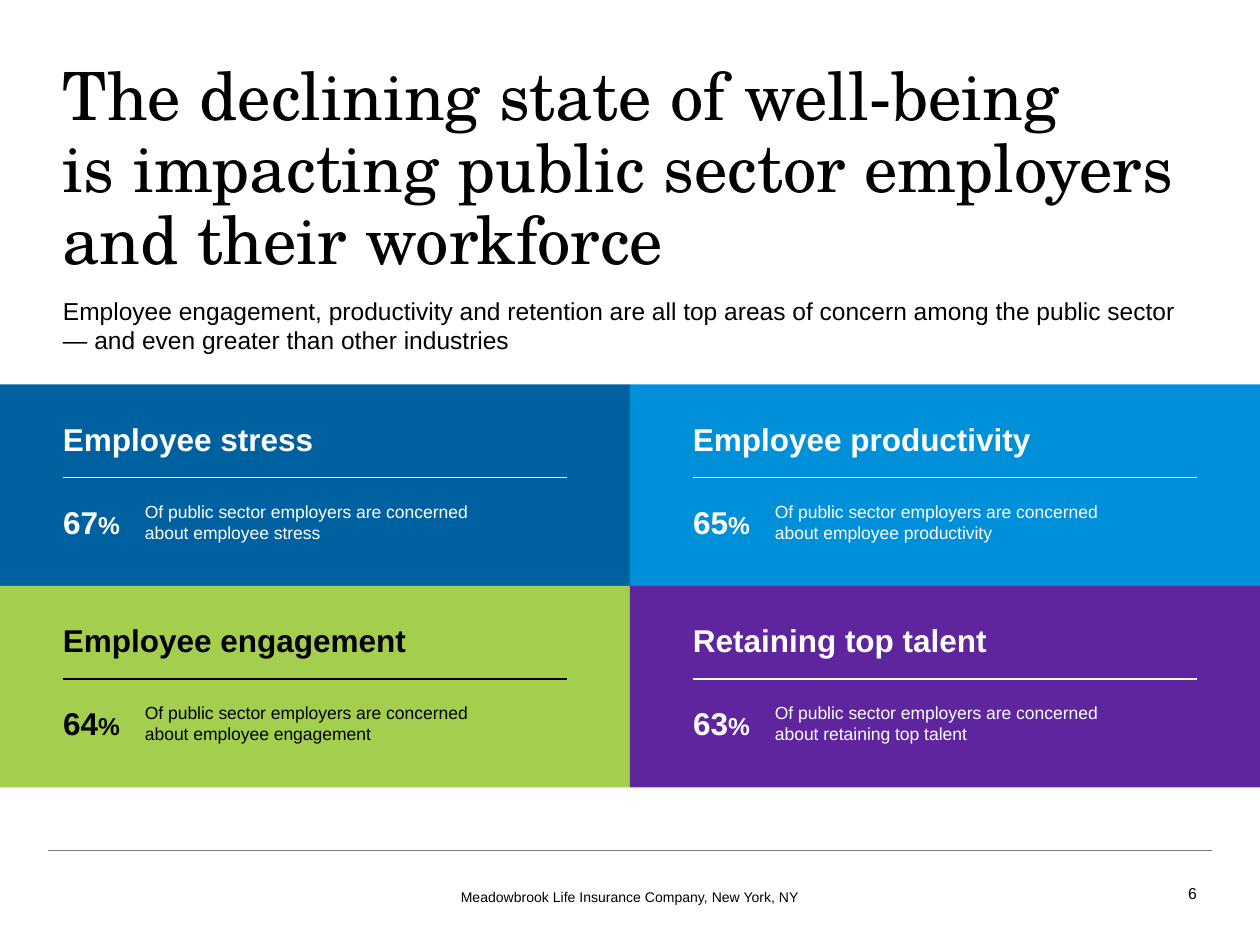
from dataclasses import dataclass

from lxml import etree
from pptx import Presentation
from pptx.dml.color import RGBColor
from pptx.enum import shapes, text
from pptx.oxml import ns
from pptx.util import Inches, Pt


@dataclass(frozen=True)
class Theme:
    serif: str = "TeX Gyre Schola"
    sans: str = "Arial"
    black: str = "000000"
    white: str = "FFFFFF"
    gray: str = "75787B"
    navy: str = "0061A0"
    blue: str = "0090DA"
    green: str = "A4CE4E"
    purple: str = "5F259F"
    title: int = 38
    heading: int = 18
    lead: int = 14
    body: int = 10
    number: int = 9
    footer: int = 8


T = Theme()
LEFT, CENTER, RIGHT = (text.PP_ALIGN.LEFT, text.PP_ALIGN.CENTER,
                       text.PP_ALIGN.RIGHT)
TOP, MIDDLE = text.MSO_ANCHOR.TOP, text.MSO_ANCHOR.MIDDLE


def add_text(s, box, runs, color=T.black, font=T.sans, bold=False,
             align=LEFT, anchor=MIDDLE, spacing=1.0):
    """Place one paragraph of (text, size) runs; newlines break lines."""
    tf = s.shapes.add_textbox(*map(Inches, box)).text_frame
    frame = dict(word_wrap=True, vertical_anchor=anchor, margin_left=0,
                 margin_right=0, margin_top=0, margin_bottom=0)
    for name, value in frame.items():
        setattr(tf, name, value)
    p = tf.paragraphs[0]
    p.alignment, p.line_spacing = align, spacing
    for words, size in runs:
        for i, line in enumerate(words.split("\n")):
            if i:
                p.add_line_break()
            r = p.add_run()
            r.text = line
            for name, value in dict(name=font, size=Pt(size), bold=bold).items():
                setattr(r.font, name, value)
            r.font.color.rgb = RGBColor.from_string(color)


def add_rule(s, x, y, w, color, weight):
    line = s.shapes.add_connector(shapes.MSO_CONNECTOR.STRAIGHT, Inches(x),
                                  Inches(y), Inches(x + w), Inches(y))
    line.line.color.rgb = RGBColor.from_string(color)
    line.line.width = Pt(weight)
    etree.SubElement(line._element.spPr, ns.qn("a:effectLst"))


def add_header(s, x, y, w):
    add_text(s, (x, y, w, 1.7),
             [("The declining state of well-being\nis impacting public sector "
               "employers and their workforce", T.title)],
             font=T.serif, anchor=TOP, spacing=0.9)
    add_text(s, (x, y + 1.85, w, 0.43),
             [("Employee engagement, productivity and retention are all top "
               "areas of concern among the public sector\n"
               "— and even greater than other industries", T.lead)],
             anchor=TOP)


def add_panel(s, x, y, w, h, fill, ink, heading, percent, topic):
    sp = s.shapes.add_shape(shapes.MSO_SHAPE.RECTANGLE,
                            *map(Inches, (x, y, w, h)))
    sp.shadow.inherit = False
    sp.fill.solid()
    sp.fill.fore_color.rgb = RGBColor.from_string(fill)
    sp.line.fill.background()

    pad, figure_w = 0.5, 0.65
    left, inner = x + pad, w - 2 * pad
    add_text(s, (left, y + 0.27, inner, 0.32), [(heading, T.heading)],
             ink, bold=True)
    add_rule(s, left, y + 0.74, inner, ink, 1)
    add_text(s, (left, y + 0.85, figure_w, 0.48),
             [(percent, T.heading), ("%", T.lead)], ink, bold=True)
    add_text(s, (left + figure_w, y + 0.85, inner - figure_w, 0.48),
             [(f"Of public sector employers are concerned\nabout {topic}",
               T.body)], ink)


def add_panels(s, x, y, w, h):
    """Fill the box with a two-by-two grid of panels."""
    panels = [
        (T.navy, T.white, "Employee stress", "67", "employee stress"),
        (T.blue, T.white, "Employee productivity", "65",
         "employee productivity"),
        (T.green, T.black, "Employee engagement", "64",
         "employee engagement"),
        (T.purple, T.white, "Retaining top talent", "63",
         "retaining top talent"),
    ]
    for i, panel in enumerate(panels):
        row, col = divmod(i, 2)
        add_panel(s, x + col * w / 2, y + row * h / 2, w / 2, h / 2, *panel)


def add_footer(s, x, y, w):
    add_rule(s, x, y, w, T.gray, 0.75)
    add_text(s, (x, y + 0.25, w, 0.24),
             [("Meadowbrook Life Insurance Company, New York, NY", T.footer)],
             align=CENTER)
    add_text(s, (x + w - 0.42, y + 0.21, 0.3, 0.25), [("6", T.number)],
             align=RIGHT)


def main():
    prs = Presentation()
    prs.slide_width, prs.slide_height = Inches(10), Inches(7.5)
    s = prs.slides.add_slide(prs.slide_layouts[6])
    add_header(s, 0.5, 0.5, 9)
    add_panels(s, 0, 3.05, 10, 3.2)
    add_footer(s, 0.38, 6.75, 9.24)
    prs.save("out.pptx")


if __name__ == "__main__":
    main()
